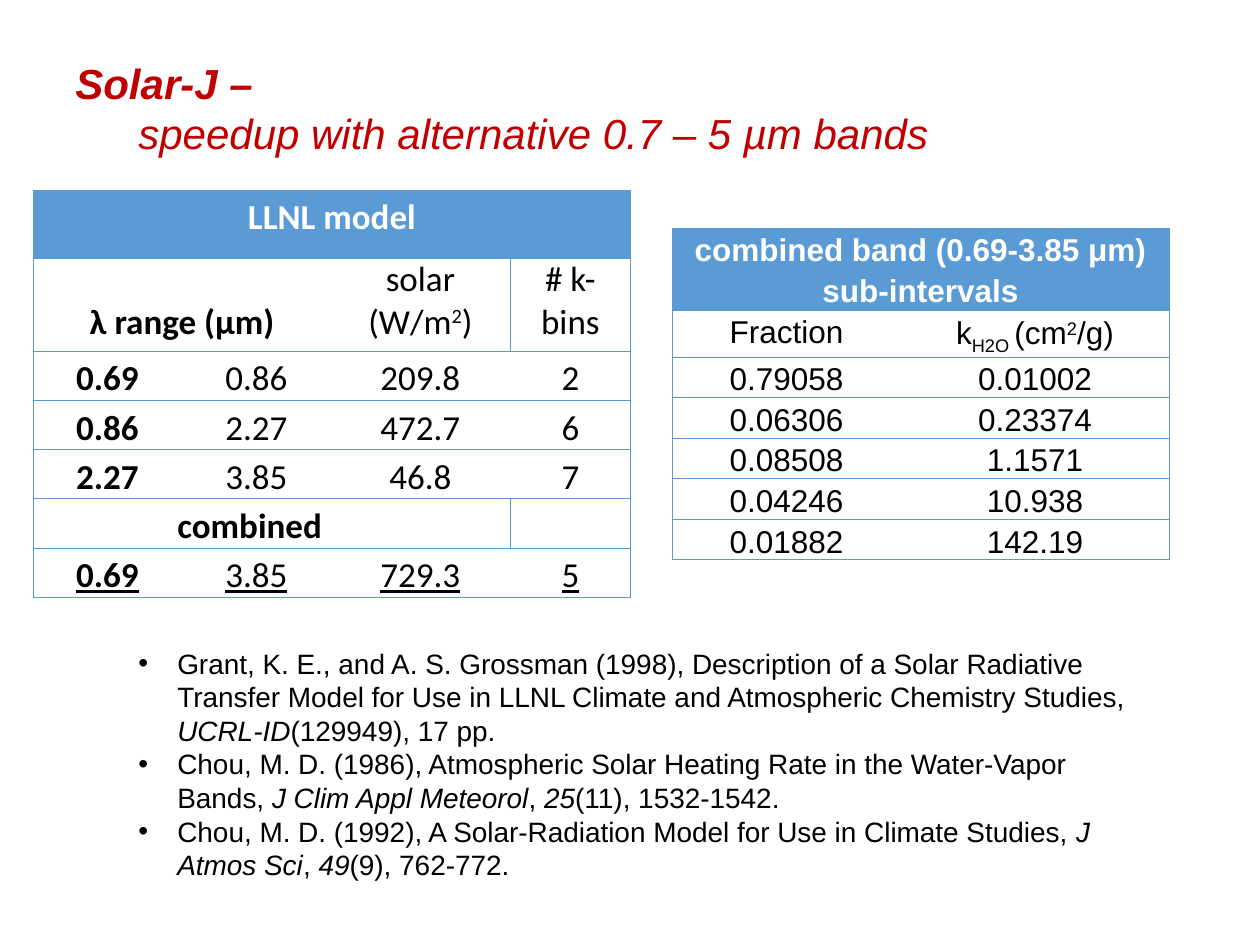
from dataclasses import dataclass

from lxml.etree import SubElement
from pptx import Presentation
from pptx.dml.color import RGBColor as Rgb
from pptx.enum.shapes import MSO_SHAPE as Shape
from pptx.enum.text import MSO_ANCHOR as Anchor, MSO_AUTO_SIZE as AutoSize, PP_ALIGN as Align
from pptx.oxml.ns import qn
from pptx.util import Pt

EMU_PER_PX = 914400 / 126
PLAIN_TABLE_STYLE = "{2D5ABB26-0587-4C30-8999-92F81FD0307C}"
BASELINES = {"sup": "30000", "sub": "-25000"}


@dataclass(frozen=True)
class Theme:
    accent: str = "5B9BD5"
    title: str = "C00000"
    text: str = "000000"
    paper: str = "FFFFFF"
    sans: str = "Arial"
    model_font: str = "Calibri"
    title_size: int = 24
    model_size: int = 20
    band_size: int = 18
    reference_size: int = 16
    border: float = 0.5


THEME = Theme()


def px(length):
    return round(length * EMU_PER_PX)


def add_runs(paragraph, runs, font, size, color):
    """Add runs given as (text, marks); marks are words among b, i, u, sup, sub."""
    for text, marks in runs:
        run = paragraph.add_run()
        run.text = text
        marks = marks.split()
        run.font.name, run.font.size = font, Pt(size)
        run.font.color.rgb = Rgb.from_string(color)
        run.font.bold = "b" in marks
        run.font.italic = "i" in marks
        run.font.underline = "u" in marks
        for mark in BASELINES.keys() & set(marks):
            run.font._element.set("baseline", BASELINES[mark])


def add_paragraphs(frame, paragraphs, font, size, color):
    for index, runs in enumerate(paragraphs):
        paragraph = frame.add_paragraph() if index else frame.paragraphs[0]
        add_runs(paragraph, runs, font, size, color)
    return frame.paragraphs


def set_borders(cell, sides):
    """Draw the sides named by letters of LRTB and clear the others."""
    properties = cell._tc.get_or_add_tcPr()
    for side in "LRTB":
        line = SubElement(properties, qn(f"a:ln{side}"), w=str(Pt(THEME.border)))
        if side in sides:
            fill = SubElement(line, qn("a:solidFill"))
            SubElement(fill, qn("a:srgbClr"), val=THEME.accent)
        else:
            SubElement(line, qn("a:noFill"))


def add_grid(slide, left, top, widths, heights, merges, divided_rows=()):
    """Add a ruled table with a filled first row; divided_rows set off the last column."""
    frame = slide.shapes.add_table(len(heights), len(widths), px(left), px(top),
                                   px(sum(widths)), px(sum(heights)))
    table = frame.table
    frame._element.find(".//" + qn("a:tableStyleId")).text = PLAIN_TABLE_STYLE
    table.first_row = table.horz_banding = False
    for column, width in zip(table.columns, widths):
        column.width = px(width)
    for row, height in zip(table.rows, heights):
        row.height = px(height)
    for row, first, last in merges:
        table.cell(row, first).merge(table.cell(row, last))

    final = len(widths) - 1
    for r in range(len(heights)):
        edges = {0, final + 1} | ({final} if r in divided_rows else set())
        for c in range(len(widths)):
            cell = table.cell(r, c)
            end = c + (cell.span_width if cell.is_merge_origin else 1)
            set_borders(cell, "TB" + "L" * (c in edges) + "R" * (end in edges))
            cell.margin_left = cell.margin_right = px(9)
            cell.margin_top = cell.margin_bottom = 0
            if r:
                cell.fill.background()
            else:
                cell.fill.solid()
                cell.fill.fore_color.rgb = Rgb.from_string(THEME.accent)
    return table


def fill_cell(cell, paragraphs, font, size, color=THEME.text, spacing=1.15, align=Align.CENTER):
    for paragraph in add_paragraphs(cell.text_frame, paragraphs, font, size, color):
        paragraph.alignment, paragraph.line_spacing = align, spacing


def add_title(slide, left, top, width, height):
    banner = slide.shapes.add_shape(Shape.RECTANGLE, px(left), px(top), px(width), px(height))
    banner.shadow.inherit = False
    banner.fill.solid()
    banner.fill.fore_color.rgb = Rgb.from_string(THEME.paper)
    banner.line.fill.background()
    frame = banner.text_frame
    frame.word_wrap, frame.auto_size = True, AutoSize.SHAPE_TO_FIT_TEXT
    frame.vertical_anchor = Anchor.MIDDLE
    lines = add_paragraphs(frame, [
        [("Solar-J –", "b i")],
        [("speedup with alternative 0.7 – 5 µm bands", "i")],
    ], THEME.sans, THEME.title_size, THEME.title)
    for line in lines:
        line.alignment = Align.LEFT
    lines[1]._p.get_or_add_pPr().set("marL", str(px(63)))


def add_model_table(slide, left, top):
    bands = [("0.69", "0.86", "209.8", "2"),
             ("0.86", "2.27", "472.7", "6"),
             ("2.27", "3.85", "46.8", "7")]
    combined_band = ("0.69", "3.85", "729.3", "5")
    combined_row = 2 + len(bands)
    table = add_grid(slide, left, top, [149, 149, 179, 121], [68, 93] + [49] * 5,
                     merges=[(0, 0, 3), (1, 0, 1), (combined_row, 0, 1)],
                     divided_rows=(1, combined_row))
    style = (THEME.model_font, THEME.model_size)

    fill_cell(table.cell(0, 0), [[("LLNL model", "b")]], *style, color=THEME.paper)
    headings = {0: [("λ range (μm)", "b")],
                2: [("solar (W/m", ""), ("2", "sup"), (")", "")],
                3: [("# k-bins", "")]}
    for column, runs in headings.items():
        fill_cell(table.cell(1, column), [runs], *style, spacing=1.0)
    range_heading = table.cell(1, 0)
    range_heading.vertical_anchor = Anchor.BOTTOM
    range_heading.margin_bottom = px(7)

    fill_cell(table.cell(combined_row, 0), [[("combined", "b")]], *style, align=Align.RIGHT)
    rows = [(2 + i, band, "") for i, band in enumerate(bands)]
    rows.append((combined_row + 1, combined_band, "u"))
    for r, values, marks in rows:
        for c, value in enumerate(values):
            fill_cell(table.cell(r, c), [[(value, marks if c else f"b {marks}")]], *style)


def add_band_table(slide, left, top):
    fractions = [("0.79058", "0.01002"), ("0.06306", "0.23374"), ("0.08508", "1.1571"),
                 ("0.04246", "10.938"), ("0.01882", "142.19")]
    table = add_grid(slide, left, top, [229, 268], [82, 47] + [40] * 5, merges=[(0, 0, 1)])
    style = (THEME.sans, THEME.band_size)

    heading = [[("combined band (0.69-3.85 μm)", "b")], [("sub-intervals", "b")]]
    fill_cell(table.cell(0, 0), heading, *style, color=THEME.paper)
    fill_cell(table.cell(1, 0), [[("Fraction", "")]], *style)
    absorption = [("k", ""), ("H2O ", "sub"), ("(cm", ""), ("2", "sup"), ("/g)", "")]
    fill_cell(table.cell(1, 1), [absorption], *style)
    for r, values in enumerate(fractions, start=2):
        for c, value in enumerate(values):
            fill_cell(table.cell(r, c), [[(value, "")]], *style)


def add_references(slide, left, top, width, height):
    references = [
        [("Grant, K. E., and A. S. Grossman (1998), Description of a Solar Radiative Transfer "
          "Model for Use in LLNL Climate and Atmospheric Chemistry Studies, ", ""),
         ("UCRL-ID", "i"), ("(129949), 17 pp.", "")],
        [("Chou, M. D. (1986), Atmospheric Solar Heating Rate in the Water-Vapor Bands, ", ""),
         ("J Clim Appl Meteorol", "i"), (", ", ""), ("25", "i"), ("(11), 1532-1542.", "")],
        [("Chou, M. D. (1992), A Solar-Radiation Model for Use in Climate Studies, ", ""),
         ("J Atmos Sci", "i"), (", ", ""), ("49", "i"), ("(9), 762-772.", "")],
    ]
    frame = slide.shapes.add_textbox(px(left), px(top), px(width), px(height)).text_frame
    frame.word_wrap, frame.auto_size = True, AutoSize.SHAPE_TO_FIT_TEXT
    style = (THEME.sans, THEME.reference_size, THEME.text)
    for paragraph in add_paragraphs(frame, references, *style):
        paragraph.level = 1
        properties = paragraph._p.get_or_add_pPr()
        properties.set("marL", str(px(102)))
        properties.set("indent", str(px(-39)))
        SubElement(properties, qn("a:buFont"), typeface=THEME.sans)
        SubElement(properties, qn("a:buChar"), char="•")


def main():
    deck = Presentation()
    deck.slide_width, deck.slide_height = px(1260), px(945)
    slide = deck.slides.add_slide(deck.slide_layouts[6])
    add_model_table(slide, 33, 190)
    add_band_table(slide, 672, 228)
    add_references(slide, 63, 640, 1106, 251)
    add_title(slide, 63, 50, 1081, 115)
    deck.save("out.pptx")


if __name__ == "__main__":
    main()
